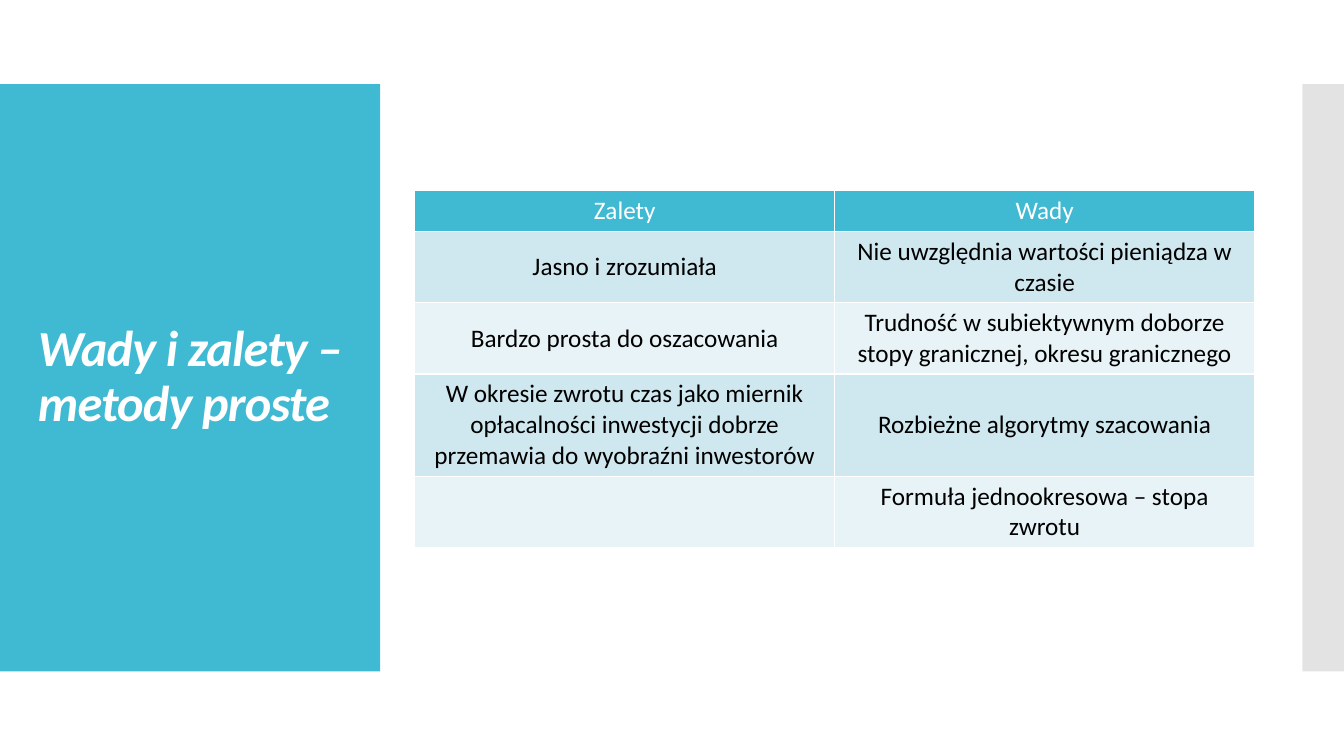
"""Build the slide on advantages and drawbacks of simple methods."""
from dataclasses import dataclass

from lxml.etree import SubElement
from pptx import Presentation
from pptx.dml.color import RGBColor
from pptx.enum.shapes import MSO_SHAPE
from pptx.enum.text import MSO_ANCHOR as Anchor, PP_ALIGN as Align
from pptx.oxml import parse_xml
from pptx.oxml.ns import nsdecls, qn
from pptx.slide import Slide
from pptx.table import _Cell as Cell
from pptx.text.text import TextFrame
from pptx.util import Pt

FONT = "Calibri"
TEAL, WHITE, BLACK, GRAY = "40BAD2", "FFFFFF", "000000", "C8C8C8"
BANDS = ("CFE7EE", "E8F3F7")
TITLE = "Wady i zalety – metody proste"


@dataclass
class Panel:
    left: float
    width: float
    color: str
    opacity: int = 100


@dataclass
class Row:
    height: float
    advantage: str
    drawback: str


PANELS = (Panel(0, 271.5, TEAL), Panel(930.2, 29.8, GRAY, 50))
ROWS = (
    Row(29.2, "Zalety", "Wady"),
    Row(50.8, "Jasno i zrozumiała", "Nie uwzględnia wartości pieniądza w czasie"),
    Row(50.8, "Bardzo prosta do oszacowania",
        "Trudność w subiektywnym doborze stopy granicznej, okresu granicznego"),
    Row(73, "W okresie zwrotu czas jako miernik opłacalności inwestycji dobrze "
        "przemawia do wyobraźni inwestorów", "Rozbieżne algorytmy szacowania"),
    Row(50.8, "", "Formuła jednookresowa – stopa zwrotu"),
)


def rgb(color: str) -> RGBColor:
    return RGBColor.from_string(color)


def write(frame: TextFrame, text: str, size: float, color: str) -> None:
    frame.text = text
    paragraph = frame.paragraphs[0]
    for font in (paragraph.font, *(run.font for run in paragraph.runs)):
        font.name, font.size = FONT, Pt(size)
        font.color.rgb = rgb(color)


def add_panel(slide: Slide, panel: Panel) -> None:
    shape = slide.shapes.add_shape(
        MSO_SHAPE.RECTANGLE, Pt(panel.left), Pt(60), Pt(panel.width), Pt(419.5))
    shape.shadow.inherit = False
    shape.fill.solid()
    shape.fill.fore_color.rgb = rgb(panel.color)
    shape.line.fill.background()
    if panel.opacity < 100:
        fill_color = shape.fill._xPr.find(qn("a:solidFill"))[0]
        SubElement(fill_color, qn("a:alpha"), val=str(panel.opacity * 1000))


def add_title(slide: Slide) -> None:
    shape = slide.shapes.add_textbox(Pt(20), Pt(88.5), Pt(232), Pt(362.5))
    frame = shape.text_frame
    frame.word_wrap = True
    frame.vertical_anchor = Anchor.MIDDLE
    write(frame, TITLE, 36, WHITE)
    paragraph = frame.paragraphs[0]
    paragraph.line_spacing = 0.9
    font = paragraph.runs[0].font
    font.bold = font.italic = True
    font._element.set("spc", "-60")


def add_borders(cell: Cell) -> None:
    properties = cell._tc.get_or_add_tcPr()
    for index, side in enumerate("LRTB"):
        properties.insert(index, parse_xml(
            f'<a:ln{side} {nsdecls("a")} w="12700"><a:solidFill>'
            f'<a:srgbClr val="{WHITE}"/></a:solidFill></a:ln{side}>'))


def add_comparison(slide: Slide) -> None:
    height = sum(row.height for row in ROWS)
    table = slide.shapes.add_table(
        len(ROWS), 2, Pt(296.2), Pt(136.3), Pt(600), Pt(height)).table
    for index, row in enumerate(ROWS):
        table.rows[index].height = Pt(row.height)
        header = index == 0
        for column, text in enumerate((row.advantage, row.drawback)):
            cell = table.cell(index, column)
            cell.fill.solid()
            cell.fill.fore_color.rgb = rgb(TEAL if header else BANDS[(index - 1) % 2])
            cell.vertical_anchor = Anchor.TOP if header else Anchor.MIDDLE
            write(cell.text_frame, text, 18, WHITE if header else BLACK)
            paragraph = cell.text_frame.paragraphs[0]
            paragraph.alignment = Align.CENTER
            for run in paragraph.runs:
                run.font.bold = False
            add_borders(cell)


def main() -> None:
    presentation = Presentation()
    presentation.slide_width, presentation.slide_height = Pt(960), Pt(540)
    slide = presentation.slides.add_slide(presentation.slide_layouts[6])
    for panel in PANELS:
        add_panel(slide, panel)
    add_title(slide)
    add_comparison(slide)
    presentation.save("out.pptx")


if __name__ == "__main__":
    main()
